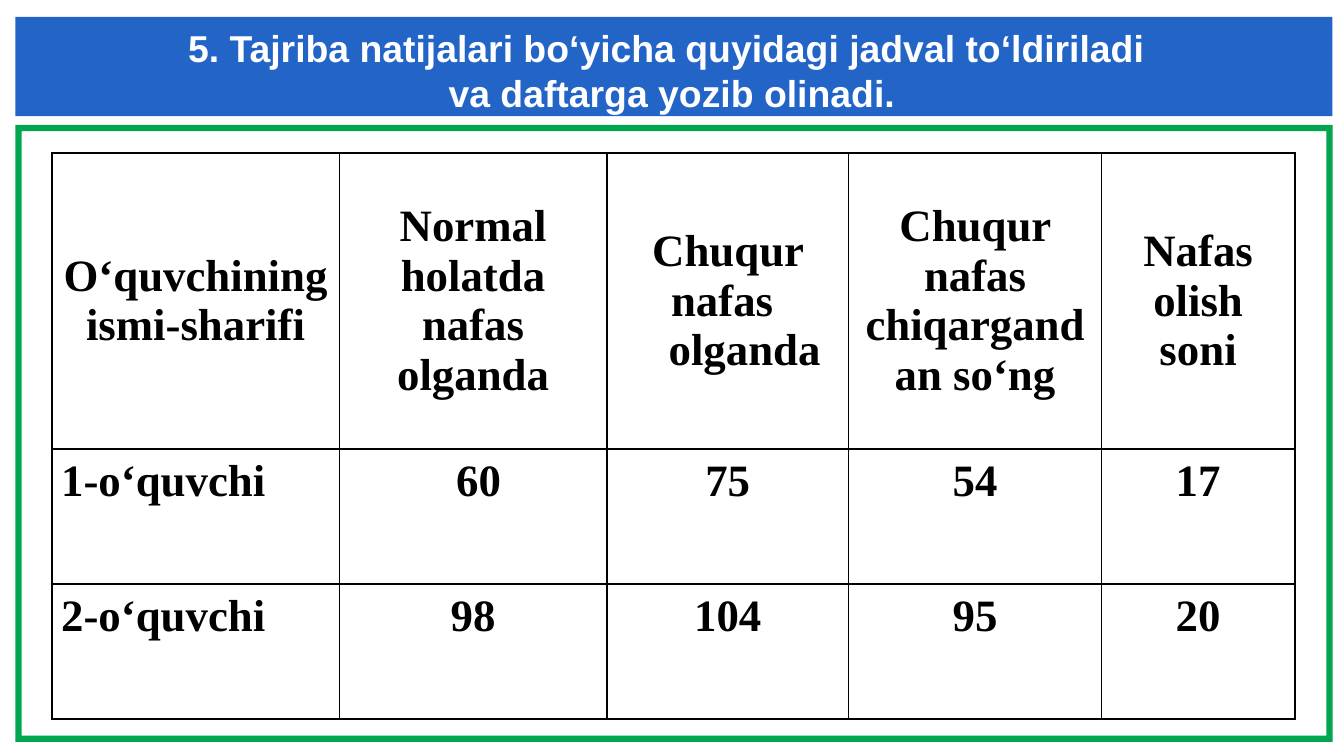
from dataclasses import dataclass

from lxml import etree
from pptx import Presentation
from pptx.dml.color import RGBColor
from pptx.enum.shapes import MSO_SHAPE
from pptx.enum.text import MSO_ANCHOR, MSO_AUTO_SIZE, PP_ALIGN
from pptx.oxml.ns import qn
from pptx.util import Pt

LEFT, CENTER = PP_ALIGN.LEFT, PP_ALIGN.CENTER
TOP, MIDDLE = MSO_ANCHOR.TOP, MSO_ANCHOR.MIDDLE
FIT_SHAPE = MSO_AUTO_SIZE.SHAPE_TO_FIT_TEXT
RECTANGLE, FRAME = MSO_SHAPE.RECTANGLE, MSO_SHAPE.FRAME
TITLE_ONLY = 5
EMU_PER_PX = 4572  # 200 px to the inch


@dataclass(frozen=True)
class Theme:
    band: str = "2365C7"
    frame: str = "00A650"
    title: str = "FFFFFF"
    ink: str = "000000"
    title_font: str = "Arial"
    table_font: str = "Times New Roman"
    title_size: int = 20
    table_size: int = 24
    border: int = 1


THEME = Theme()
TITLE = "5. Tajriba natijalari bo‘yicha quyidagi jadval to‘ldiriladi \vva daftarga yozib olinadi."
HEADINGS = [
    "O‘quvchining ismi-sharifi",
    "Normal holatda nafas olganda",
    "Chuqur nafas ",
    "Chuqur nafas chiqargandan so‘ng",
    "Nafas olish soni",
]
INHALED = 2  # column whose heading goes on in an indented paragraph
PUPILS = [
    ["1-o‘quvchi", " 60", "75", "54", "17"],
    ["2-o‘quvchi", "98", "104", "95", "20"],
]
COLUMN_WIDTHS = [428, 398, 360, 376, 288]
ROW_HEIGHTS = [440, 201, 201]


def px(length):
    return length * EMU_PER_PX


def write(paragraph, text, *, font, size, color, align=CENTER, spacing=1.0, after=0, indent=0):
    paragraph.text = text
    paragraph.alignment = align
    paragraph.line_spacing = spacing
    paragraph.space_before = Pt(0)
    paragraph.space_after = Pt(after)
    if indent:
        paragraph._p.get_or_add_pPr().set("marL", str(px(indent)))
    for run in paragraph.runs:
        run.font.name = font
        run.font.size = Pt(size)
        run.font.bold = True
        run.font.color.rgb = RGBColor.from_string(color)


def add_block(slide, preset, box, color):
    block = slide.shapes.add_shape(preset, *map(px, box))
    block.shadow.inherit = False
    block.fill.solid()
    block.fill.fore_color.rgb = RGBColor.from_string(color)
    block.line.fill.background()
    return block


def add_heading(slide, box):
    left, top, width, height = box
    add_block(slide, RECTANGLE, box, THEME.band)
    title = slide.shapes.title
    title.element.getparent().append(title.element)  # bring in front of the band
    title.left, title.top = px(left + 81), px(top + 12)
    title.width, title.height = px(width - 168), px(height - 14)
    frame = title.text_frame
    frame.margin_left = frame.margin_right = frame.margin_top = frame.margin_bottom = 0
    frame.vertical_anchor = TOP
    frame.word_wrap = True
    frame.auto_size = FIT_SHAPE
    write(frame.paragraphs[0], TITLE, font=THEME.title_font, size=THEME.title_size,
          color=THEME.title)


def format_cell(cell, anchor):
    """Give the cell its margins, thin borders on all sides and no fill."""
    cell.margin_left = cell.margin_right = px(14)
    cell.margin_top = cell.margin_bottom = 0
    cell.vertical_anchor = anchor
    properties = cell._tc.get_or_add_tcPr()
    for side in ("lnL", "lnR", "lnT", "lnB"):
        line = etree.SubElement(properties, qn(f"a:{side}"), w=str(Pt(THEME.border)))
        fill = etree.SubElement(line, qn("a:solidFill"))
        etree.SubElement(fill, qn("a:srgbClr"), val=THEME.ink)
    cell.fill.background()


def add_results(slide, box):
    left, top, width, height = box
    border = add_block(slide, FRAME, box, THEME.frame)
    border.adjustments[0] = 0.01

    rows = [HEADINGS, *PUPILS]
    table = slide.shapes.add_table(
        len(rows), len(HEADINGS), px(left + 54), px(top + 42),
        px(sum(COLUMN_WIDTHS)), px(sum(ROW_HEIGHTS))).table
    table.first_row = table.horz_banding = False
    for column, column_width in zip(table.columns, COLUMN_WIDTHS):
        column.width = px(column_width)
    for row, row_height in zip(table.rows, ROW_HEIGHTS):
        row.height = px(row_height)

    style = dict(font=THEME.table_font, size=THEME.table_size, color=THEME.ink)
    for r, values in enumerate(rows):
        for c, value in enumerate(values):
            cell = table.cell(r, c)
            paragraph = cell.text_frame.paragraphs[0]
            if r == 0:
                format_cell(cell, MIDDLE)
                write(paragraph, value, **style)
            else:
                format_cell(cell, TOP)
                write(paragraph, value, align=CENTER if c else LEFT,
                      spacing=1.15, after=10, **style)
    write(table.cell(0, INHALED).text_frame.add_paragraph(), "olganda", indent=50, **style)


def main():
    deck = Presentation()
    deck.slide_width, deck.slide_height = px(2000), px(1125)
    slide = deck.slides.add_slide(deck.slide_layouts[TITLE_ONLY])
    add_heading(slide, (23, 25, 1960, 148))
    add_results(slide, (23, 186, 1960, 918))
    deck.save("out.pptx")


if __name__ == "__main__":
    main()
